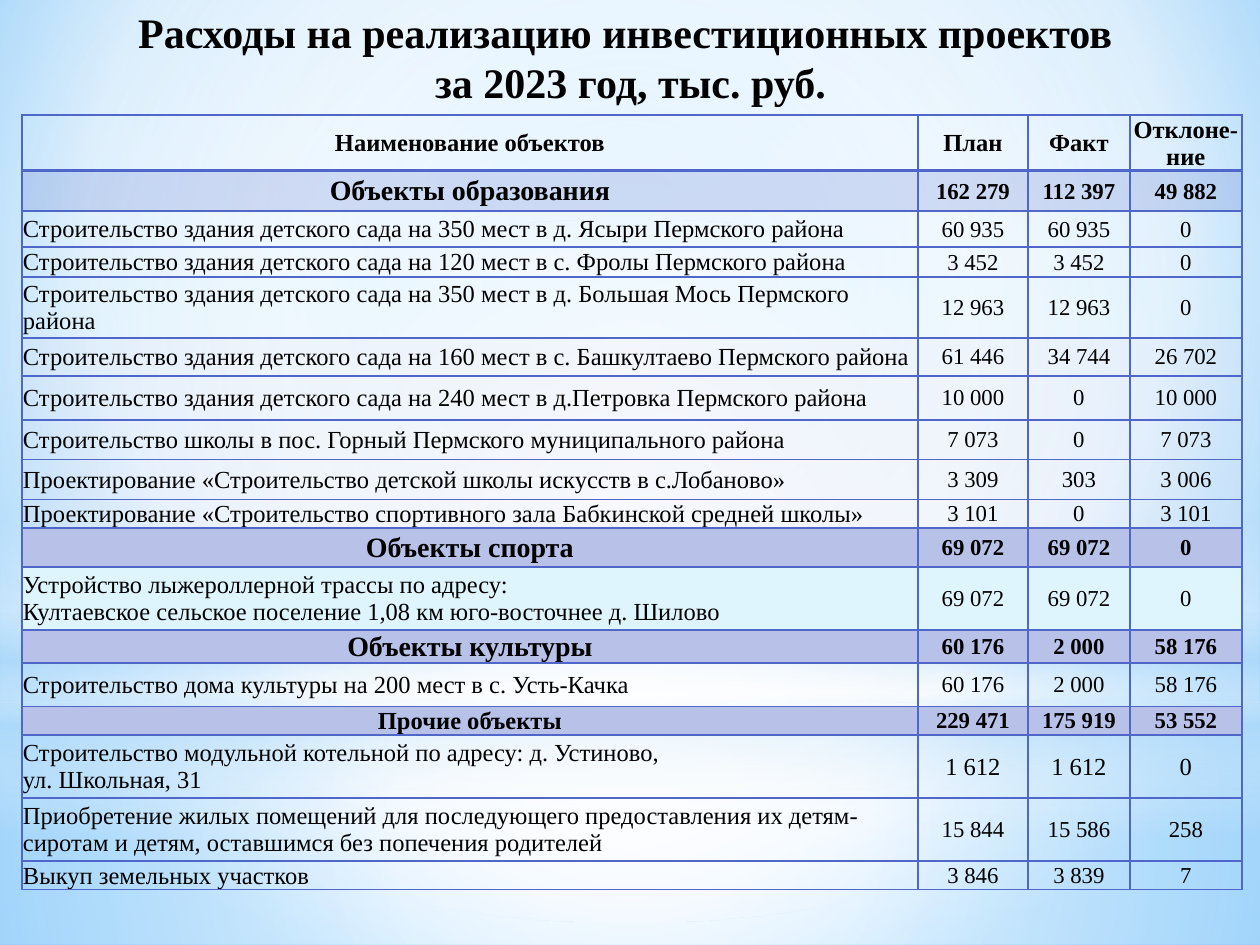
from dataclasses import dataclass

from lxml.etree import SubElement
from pptx import Presentation
from pptx.dml.color import RGBColor
from pptx.enum.shapes import MSO_SHAPE
from pptx.enum.text import MSO_ANCHOR, PP_ALIGN
from pptx.oxml import parse_xml
from pptx.oxml.ns import nsdecls, qn
from pptx.util import Pt

PX = 914400 // 126
WIDTH, HEIGHT = 1260, 945
CENTER = '<a:path path="circle"><a:fillToRect l="50000" t="50000" r="50000" b="50000"/></a:path>'
UPPER = '<a:path path="circle"><a:fillToRect l="20000" t="10000" r="20000" b="60000"/></a:path>'
DOWN = '<a:lin ang="5400000" scaled="0"/>'


def color(value):
    return RGBColor.from_string(value)


def apply(target, values):
    for name, value in values.items():
        setattr(target, name, value)


def set_fill(fill, value, alpha=100):
    if value is None:
        fill.background()
        return
    fill.solid()
    fill.fore_color.rgb = color(value)
    if alpha < 100:
        tint = fill._xPr.find(qn("a:solidFill"))[0]
        SubElement(tint, qn("a:alpha"), val=str(alpha * 1000))


def set_gradient(fill, stops, direction):
    """Stops are (position, colour, opacity), all in percent."""
    marks = "".join(
        f'<a:gs pos="{place * 1000}"><a:srgbClr val="{tint}">'
        f'<a:alpha val="{alpha * 1000}"/></a:srgbClr></a:gs>'
        for place, tint, alpha in stops)
    fill.gradient()
    blank = fill._xPr.find(qn("a:gradFill"))
    blank.getparent().replace(blank, parse_xml(
        f'<a:gradFill {nsdecls("a")} rotWithShape="1"><a:gsLst>{marks}</a:gsLst>'
        f'{direction}</a:gradFill>'))


@dataclass
class RowStyle:
    fill: str = None
    alpha: int = 100
    name_size: int = 14
    value_size: int = 13
    bold: bool = False
    name_align: PP_ALIGN = PP_ALIGN.LEFT


class SlideBuilder:
    font = "Times New Roman"
    ink = "000000"
    rule = "4E67C8"

    def __init__(self, page):
        self.page = page

    def glow(self, preset, left, top, width, height, stops, direction):
        shape = self.page.shapes.add_shape(
            preset, left * PX, top * PX, width * PX, height * PX)
        shape.shadow.inherit = False
        shape.line.fill.background()
        set_gradient(shape.fill, stops, direction)

    def set_text(self, frame, text, size, bold, align):
        para = frame.paragraphs[0]
        para.text = text
        para.alignment = align
        for span in para.runs:
            apply(span.font, {"name": self.font, "size": Pt(size), "bold": bold})
            span.font.color.rgb = color(self.ink)

    def title(self, text, left, top, width, height):
        box = self.page.shapes.add_textbox(left * PX, top * PX, width * PX, height * PX)
        box.text_frame.word_wrap = True
        self.set_text(box.text_frame, text, 24, True, PP_ALIGN.CENTER)

    def borders(self, cell, widths):
        properties = cell._tc.get_or_add_tcPr()
        for index, (side, width) in enumerate(zip("LRTB", widths)):
            properties.insert(index, parse_xml(
                f'<a:ln{side} {nsdecls("a")} w="{Pt(width)}"><a:solidFill>'
                f'<a:srgbClr val="{self.rule}"/></a:solidFill></a:ln{side}>'))

    def table(self, left, top, columns, rows):
        heights = [row[0] for row in rows]
        table = self.page.shapes.add_table(
            len(rows), len(columns), left * PX, top * PX,
            sum(columns) * PX, sum(heights) * PX).table
        apply(table, {"first_row": False, "horz_banding": False})
        for column, width in zip(table.columns, columns):
            column.width = width * PX
        for number, (height, style, *texts) in enumerate(rows):
            table.rows[number].height = height * PX
            widths = (1, 1, 2 if number == 1 else 1, 2 if number == 0 else 1)
            for position, text in enumerate(texts):
                cell = table.cell(number, position)
                apply(cell, {"margin_left": PX, "margin_right": PX, "margin_top": PX,
                             "margin_bottom": 0, "vertical_anchor": MSO_ANCHOR.MIDDLE})
                set_fill(cell.fill, style.fill, style.alpha)
                self.borders(cell, widths)
                size = style.value_size if position else style.name_size
                align = PP_ALIGN.CENTER if position else style.name_align
                self.set_text(cell.text_frame, text, size, style.bold, align)


# Row styles
MIDDLE = PP_ALIGN.CENTER
HEAD = RowStyle(value_size=14, bold=True, name_align=MIDDLE)
PALE_GROUP = RowStyle("4E67C8", 20, 16, bold=True, name_align=MIDDLE)
GROUP = RowStyle("B8C2E9", name_size=16, bold=True, name_align=MIDDLE)
SMALL_GROUP = RowStyle("B8C2E9", bold=True, name_align=MIDDLE)
PLAIN = RowStyle()
LARGE = RowStyle(value_size=14)
SKY = RowStyle("DFF5FD")
PALE_SKY = RowStyle("DFF5FD", 20)
LILAC = RowStyle("DCE1F4", 20)

COLUMNS = [896, 110, 102, 112]
ROWS = [
    (56, HEAD, "Наименование объектов", "План", "Факт", "Отклоне-ние"),
    (40, PALE_GROUP, "Объекты образования", "162 279", "112 397", "49 882"),
    (36, PLAIN, "Строительство здания детского сада на 350 мест в д. Ясыри Пермского района",
     "60 935", "60 935", "0"),
    (30, PLAIN, "Строительство здания детского сада на 120 мест в с. Фролы Пермского района",
     "3 452", "3 452", "0"),
    (61, PALE_SKY, "Строительство здания детского сада на 350 мест в д. Большая Мось "
     "Пермского района", "12 963", "12 963", "0"),
    (38, LILAC, "Строительство здания детского сада на 160 мест в c. Башкултаево "
     "Пермского района", "61 446", "34 744", "26 702"),
    (44, LILAC, "Строительство здания детского сада на 240 мест в д.Петровка Пермского района",
     "10 000", "0", "10 000"),
    (40, LILAC, "Строительство школы в пос. Горный Пермского муниципального района",
     "7 073", "0", "7 073"),
    (40, LILAC, "Проектирование «Строительство детской школы искусств в с.Лобаново»",
     "3 309", "303", "3 006"),
    (28, LILAC, "Проектирование «Строительство спортивного зала Бабкинской средней школы»",
     "3 101", "0", "3 101"),
    (39, GROUP, "Объекты спорта", "69 072", "69 072", "0"),
    (63, SKY, "Устройство лыжероллерной трассы по адресу: \n"
     "Култаевское сельское поселение 1,08 км юго-восточнее д. Шилово",
     "69 072", "69 072", "0"),
    (33, GROUP, "Объекты культуры", "60 176", "2 000", "58 176"),
    (44, PLAIN, "Строительство дома культуры на 200 мест в с. Усть-Качка",
     "60 176", "2 000", "58 176"),
    (28, SMALL_GROUP, "Прочие объекты", "229 471", "175 919", "53 552"),
    (63, LARGE, "Строительство модульной котельной по адресу: д. Устиново, \nул. Школьная, 31",
     "1 612", "1 612", "0"),
    (63, PLAIN, "Приобретение жилых помещений для последующего предоставления их "
     "детям-сиротам и детям, оставшимся без попечения родителей",
     "15 844", "15 586", "258"),
    (29, PLAIN, "Выкуп земельных участков", "3 846", "3 839", "7"),
]


def main():
    deck = Presentation()
    apply(deck, {"slide_width": WIDTH * PX, "slide_height": HEIGHT * PX})
    page = deck.slides.add_slide(deck.slide_layouts[6])
    builder = SlideBuilder(page)

    # Background and soft glows
    set_gradient(page.background.fill,
                 [(0, "9ED5FF", 100), (69, "FFFFFF", 100), (100, "5BB9FF", 100)], UPPER)
    builder.glow(MSO_SHAPE.RECTANGLE, 0, 703, WIDTH, 242,
                 [(0, "FFFFFF", 91), (37, "FFFFFF", 76), (100, "B4DCFA", 79)], CENTER)
    builder.glow(MSO_SHAPE.RECTANGLE, 0, 0, WIDTH, 703,
                 [(0, "FFFFFF", 89), (48, "FFFFFF", 62), (100, "B4DCFA", 79)], CENTER)
    builder.glow(MSO_SHAPE.RECTANGLE, 0, 519, WIDTH, 315,
                 [(0, "FFFFFF", 0), (29, "FFFFFF", 30), (45, "B4DCFA", 40),
                  (55, "FFFFFF", 26), (65, "B4DCFA", 60), (100, "FFFFFF", 0)], DOWN)
    builder.glow(MSO_SHAPE.OVAL, 0, 220, WIDTH, 703,
                 [(0, "FFFFFF", 100), (56, "FFFFFF", 0)], CENTER)

    # Spending table and heading
    builder.table(22, 115, COLUMNS, ROWS)
    builder.title("Расходы на реализацию инвестиционных проектов \nза 2023 год, тыс. руб.",
                  20, 0, 1221, 115)

    deck.save("out.pptx")


if __name__ == "__main__":
    main()
